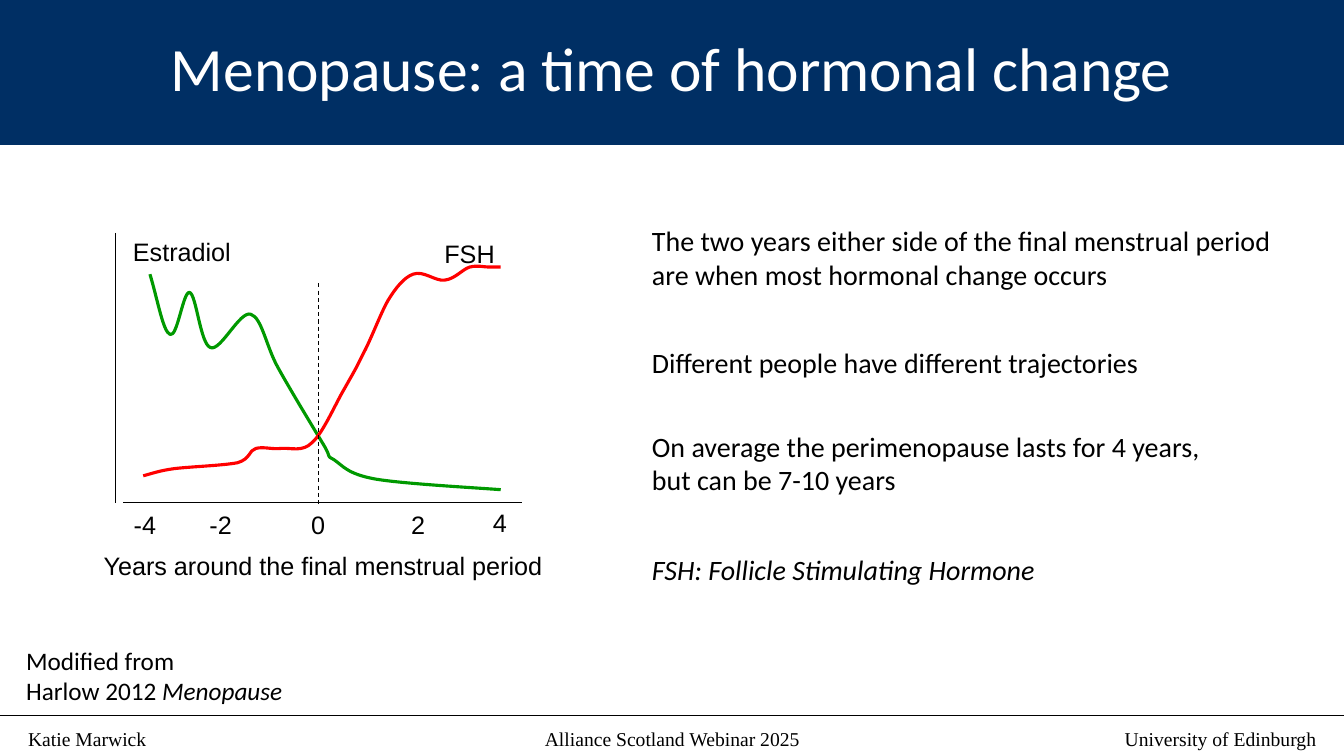
from dataclasses import dataclass

from lxml.etree import SubElement
from pptx import Presentation
from pptx.dml.color import RGBColor
from pptx.enum.dml import MSO_LINE
from pptx.enum.shapes import MSO_CONNECTOR, MSO_SHAPE
from pptx.enum.text import MSO_ANCHOR, PP_ALIGN
from pptx.oxml.ns import qn
from pptx.util import Cm, Pt

NAVY, WHITE, BLACK = "002F64", "FFFFFF", "000000"
GREEN, RED = "009900", "FF0000"


@dataclass
class Label:
    text: str
    left: float
    top: float
    width: float
    height: float = 1.02
    size: float = 18
    font: str = "Arial"
    align: PP_ALIGN = PP_ALIGN.LEFT
    italic: bool = False
    wrap: bool = True


@dataclass
class Rule:
    start: tuple[float, float]
    end: tuple[float, float]
    weight: float = 0.75
    dashed: bool = False


@dataclass
class Curve:
    """Smooth line: a start point, then two handles and an end point per segment."""
    color: str
    start: tuple[float, float]
    segments: list[tuple[float, ...]]


def body(text: str, top: float, height: float, italic: bool = False) -> Label:
    return Label(text, 16.18, top, 16.59, height, 20, "Calibri", italic=italic)


def footer(text: str, left: float, width: float) -> Label:
    return Label(text, left, 18.19, width, 0.86, 14, "Times New Roman",
                 PP_ALIGN.CENTER, wrap=False)


FOOTER_RULE = Rule((0, 18.03), (33.87, 18.03), 0.5)
AXES = [
    Rule((3.1, 12.67), (13.16, 12.67)),
    Rule((2.92, 5.87), (2.92, 12.67)),
]
FINAL_PERIOD = Rule((8.03, 7.14), (8.03, 12.75), dashed=True)

ESTRADIOL = Curve(GREEN, (3.78, 6.91), [
    (3.99, 7.62, 4.11, 8.36, 4.29, 8.43),
    (4.47, 8.51, 4.62, 7.32, 4.78, 7.37),
    (4.95, 7.42, 5.05, 8.69, 5.31, 8.76),
    (5.56, 8.86, 6.05, 7.82, 6.32, 7.92),
    (6.6, 8.0, 6.71, 8.74, 7.01, 9.27),
    (7.32, 9.83, 7.92, 10.82, 8.15, 11.2),
    (8.38, 11.58, 8.2, 11.46, 8.41, 11.58),
    (8.64, 11.73, 8.74, 11.94, 9.45, 12.07),
    (10.13, 12.19, 11.96, 12.29, 12.62, 12.34),
])
FSH = Curve(RED, (3.61, 11.99), [
    (3.81, 11.94, 4.01, 11.86, 4.39, 11.81),
    (4.8, 11.76, 5.64, 11.73, 5.99, 11.66),
    (6.32, 11.56, 6.27, 11.35, 6.45, 11.3),
    (6.65, 11.25, 6.86, 11.33, 7.09, 11.3),
    (7.34, 11.28, 7.62, 11.4, 7.87, 11.15),
    (8.15, 10.9, 8.46, 10.16, 8.69, 9.78),
    (8.89, 9.42, 8.97, 9.3, 9.14, 8.94),
    (9.35, 8.56, 9.58, 7.92, 9.78, 7.57),
    (9.98, 7.24, 10.19, 6.99, 10.41, 6.91),
    (10.67, 6.81, 10.97, 7.09, 11.2, 7.06),
    (11.46, 7.04, 11.66, 6.78, 11.84, 6.73),
    (12.04, 6.68, 12.19, 6.73, 12.32, 6.73),
    (12.45, 6.73, 12.55, 6.73, 12.62, 6.73),
])

LABELS = [
    footer("Katie Marwick", 0.41, 3.58),
    footer("University of Edinburgh", 28.07, 5.38),
    footer("Alliance Scotland Webinar 2025", 13.16, 7.57),
    Label("0", 7.59, 12.7, 0.86, align=PP_ALIGN.CENTER),
    Label("-2", 5.03, 12.7, 1.19),
    Label("-4", 3.12, 12.7, 1.37),
    Label("2", 10.11, 12.7, 0.86),
    Label("4", 12.17, 12.67, 1.37),
    Label("FSH", 10.95, 5.87, 1.88),
    Label("Estradiol", 3.1, 5.82, 3.53),
    Label("Years around the final menstrual period", 2.36, 13.74, 12.14),
    body("The two years either side of the final menstrual period "
         "are when most hormonal change occurs", 5.51, 1.96),
    body("Different people have different trajectories", 8.59, 1.12),
    body("On average the perimenopause lasts for 4 years,\nbut can be 7-10 years",
         10.69, 1.96),
    body("FSH: Follicle Stimulating Hormone", 13.79, 1.12, italic=True),
]


def rgb(color: str) -> RGBColor:
    return RGBColor.from_string(color)


def add_text(p, text: str, *, size: float, font: str, color: str = BLACK,
             italic: bool = False) -> None:
    for i, line in enumerate(text.split("\n")):
        if i:
            p.add_line_break()
        r = p.add_run()
        r.text = line
        r.font.size, r.font.name, r.font.italic = Pt(size), font, italic
        r.font.color.rgb = rgb(color)


def add_box(s, left: float, top: float, width: float, height: float, wrap: bool = True):
    tf = s.shapes.add_textbox(Cm(left), Cm(top), Cm(width), Cm(height)).text_frame
    tf.word_wrap = wrap
    return tf


def add_label(s, label: Label) -> None:
    tf = add_box(s, label.left, label.top, label.width, label.height, label.wrap)
    p = tf.paragraphs[0]
    p.alignment = label.align
    add_text(p, label.text, size=label.size, font=label.font, italic=label.italic)


def add_rule(s, rule: Rule) -> None:
    line = s.shapes.add_connector(
        MSO_CONNECTOR.STRAIGHT, *map(Cm, rule.start + rule.end))
    line.line.color.rgb = rgb(BLACK)
    line.line.width = Pt(rule.weight)
    if rule.dashed:
        line.line.dash_style = MSO_LINE.DASH
    SubElement(line._element.spPr, qn("a:effectLst"))


def add_curve(s, curve: Curve) -> None:
    builder = s.shapes.build_freeform(*map(Cm, curve.start))
    for seg in curve.segments:
        builder.add_line_segments(
            [(Cm(x), Cm(y)) for x, y in zip(seg[::2], seg[1::2])], close=False)
    sp = builder.convert_to_shape()
    sp.shadow.inherit = False
    sp.fill.background()
    sp.line.color.rgb = rgb(curve.color)
    sp.line.width = Pt(2.25)
    # Join every three straight segments into one cubic Bézier
    path = sp._element.find(".//" + qn("a:path"))
    steps = path.findall(qn("a:lnTo"))
    for i in range(0, len(steps), 3):
        cubic = SubElement(path, qn("a:cubicBezTo"))
        for step in steps[i:i + 3]:
            cubic.append(step[0])
            path.remove(step)


def add_title(s) -> None:
    sp = s.shapes.add_shape(MSO_SHAPE.RECTANGLE, 0, Cm(-0.03), Cm(33.87), Cm(3.68))
    sp.shadow.inherit = False
    sp.fill.solid()
    sp.fill.fore_color.rgb = rgb(NAVY)
    sp.line.fill.background()
    sp.text_frame.vertical_anchor = MSO_ANCHOR.MIDDLE
    p = sp.text_frame.paragraphs[0]
    p.alignment, p.line_spacing = PP_ALIGN.CENTER, 0.9
    add_text(p, "Menopause: a time of hormonal change",
             size=44, font="Calibri", color=WHITE)


def add_citation(s) -> None:
    tf = add_box(s, 0.41, 16.13, 11.86, 1.8)
    add_text(tf.paragraphs[0], "Modified from", size=18, font="Calibri")
    p = tf.add_paragraph()
    add_text(p, "Harlow 2012 ", size=18, font="Calibri")
    add_text(p, "Menopause", size=18, font="Calibri", italic=True)


def main() -> None:
    prs = Presentation()
    prs.slide_width, prs.slide_height = Cm(33.87), Cm(19.05)
    s = prs.slides.add_slide(prs.slide_layouts[6])
    add_title(s)
    add_citation(s)
    for rule in [FOOTER_RULE, *AXES]:
        add_rule(s, rule)
    for curve in (ESTRADIOL, FSH):
        add_curve(s, curve)
    add_rule(s, FINAL_PERIOD)
    for label in LABELS:
        add_label(s, label)
    prs.save("out.pptx")


if __name__ == "__main__":
    main()
